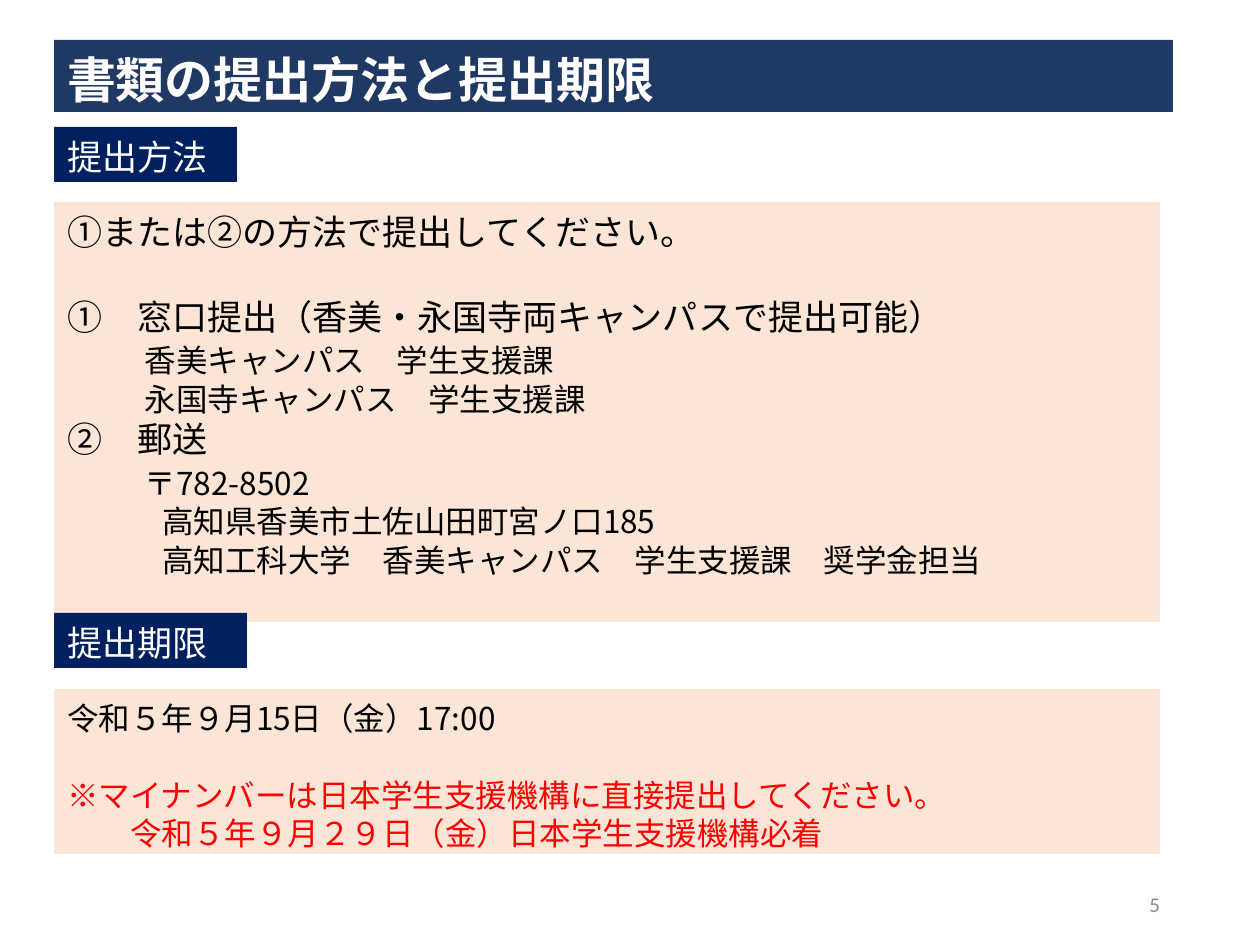
from dataclasses import dataclass

from lxml import etree
from pptx import Presentation
from pptx.dml.color import RGBColor
from pptx.enum.shapes import MSO_SHAPE
from pptx.enum.text import MSO_ANCHOR, MSO_AUTO_SIZE, PP_ALIGN
from pptx.oxml.ns import qn
from pptx.util import Emu, Inches, Pt

RECT = MSO_SHAPE.RECTANGLE
LEFT, RIGHT = PP_ALIGN.LEFT, PP_ALIGN.RIGHT
TOP, MIDDLE = MSO_ANCHOR.TOP, MSO_ANCHOR.MIDDLE
NO_FIT = MSO_AUTO_SIZE.NONE
SCALE = 914400 / 126  # EMU in one px


@dataclass(frozen=True)
class Theme:
    font: str = "Noto Sans CJK JP"
    latin: str = "Calibri"
    bar: str = "203864"
    tag: str = "002060"
    panel: str = "FBE5D6"
    white: str = "FFFFFF"
    black: str = "000000"
    red: str = "FF0000"
    gray: str = "8C8C8C"
    title: int = 28
    head: int = 20
    body: int = 18
    small: int = 12


@dataclass(frozen=True)
class Box:
    left: int
    top: int
    width: int
    height: int


@dataclass(frozen=True)
class Line:
    text: str
    size: int
    lead: int  # line height in points
    color: str = Theme.black
    indent: int = 0
    gap: int = 0  # points above
    bold: bool = False
    font: str = Theme.font
    align: PP_ALIGN = LEFT


def px(value: int) -> Emu:
    return Emu(round(value * SCALE))


def assign(target, values: dict) -> None:
    for name, value in values.items():
        setattr(target, name, value)


def place(shape, box: Box, fill: str = "") -> None:
    assign(shape, {"left": px(box.left), "top": px(box.top),
                   "width": px(box.width), "height": px(box.height)})
    if fill:
        shape.fill.solid()
        shape.fill.fore_color.rgb = RGBColor.from_string(fill)
        shape.line.fill.background()


def write(shape, lines: list[Line], anchor: MSO_ANCHOR = TOP) -> None:
    frame = shape.text_frame
    assign(frame, {"word_wrap": True, "auto_size": NO_FIT,
                   "vertical_anchor": anchor,
                   "margin_left": px(13), "margin_right": px(13),
                   "margin_top": px(9), "margin_bottom": px(3)})
    for i, line in enumerate(lines):
        para = frame.add_paragraph() if i else frame.paragraphs[0]
        assign(para, {"alignment": line.align, "line_spacing": Pt(line.lead),
                      "space_before": Pt(line.gap), "space_after": Pt(0)})
        props = para._p.get_or_add_pPr()
        props.set("marL", str(px(line.indent)))
        props.set("indent", "0")
        etree.SubElement(props, qn("a:buNone"))
        run = para.add_run()
        run.text = line.text
        assign(run.font, {"name": line.font, "size": Pt(line.size),
                          "bold": line.bold})
        run.font.color.rgb = RGBColor.from_string(line.color)
        east = etree.SubElement(run._r.get_or_add_rPr(), qn("a:ea"))
        east.set("typeface", line.font)


def add_tag(slide, box: Box, text: str) -> None:
    shape = slide.shapes.add_shape(RECT, 0, 0, 0, 0)
    shape.shadow.inherit = False
    place(shape, box, Theme.tag)
    write(shape, [Line(text, Theme.head, 24, Theme.white)])


def head(text: str, **extra) -> Line:
    return Line(text, Theme.head, 24, **extra)


def item(text: str, lead: int = 22, **extra) -> Line:
    return Line(text, Theme.body, lead, **extra)


METHOD = [
    head("①または②の方法で提出してください。"),
    head("①　窓口提出（香美・永国寺両キャンパスで提出可能）", gap=24),
    item("香美キャンパス　学生支援課", 24, indent=78),
    item("永国寺キャンパス　学生支援課", indent=78),
    head("②　郵送"),
    item("〒782-8502", 24, indent=78),
    item("高知県香美市土佐山田町宮ノ口185", indent=95),
    item("高知工科大学　香美キャンパス　学生支援課　奨学金担当", indent=95),
]
LIMIT = [
    item("令和５年９月15日（金）17:00"),
    item("※マイナンバーは日本学生支援機構に直接提出してください。",
         color=Theme.red, gap=22),
    item("令和５年９月２９日（金）日本学生支援機構必着",
         color=Theme.red, indent=63),
]
PANELS = [(1, Box(54, 202, 1106, 420), METHOD),
          (2, Box(54, 689, 1106, 165), LIMIT)]
TAGS = [(Box(54, 127, 183, 55), "提出方法"),
        (Box(54, 613, 193, 55), "提出期限")]


def main() -> None:
    deck = Presentation()
    assign(deck, {"slide_width": Inches(10), "slide_height": Inches(7.5)})
    slide = deck.slides.add_slide(deck.slide_layouts[3])

    # Title bar
    title = slide.shapes.title
    place(title, Box(54, 40, 1119, 72), Theme.bar)
    write(title, [Line("書類の提出方法と提出期限", Theme.title, 34,
                       Theme.white, bold=True)])

    # Text panels
    for key, box, lines in PANELS:
        panel = slide.placeholders[key]
        place(panel, box, Theme.panel)
        write(panel, lines)

    # Section tags
    for box, text in TAGS:
        add_tag(slide, box, text)

    # Page number
    page = slide.shapes.add_textbox(0, 0, 0, 0)
    place(page, Box(890, 876, 283, 50))
    write(page, [Line("5", Theme.small, 15, Theme.gray,
                      font=Theme.latin, align=RIGHT)], MIDDLE)

    deck.save("out.pptx")


if __name__ == "__main__":
    main()
